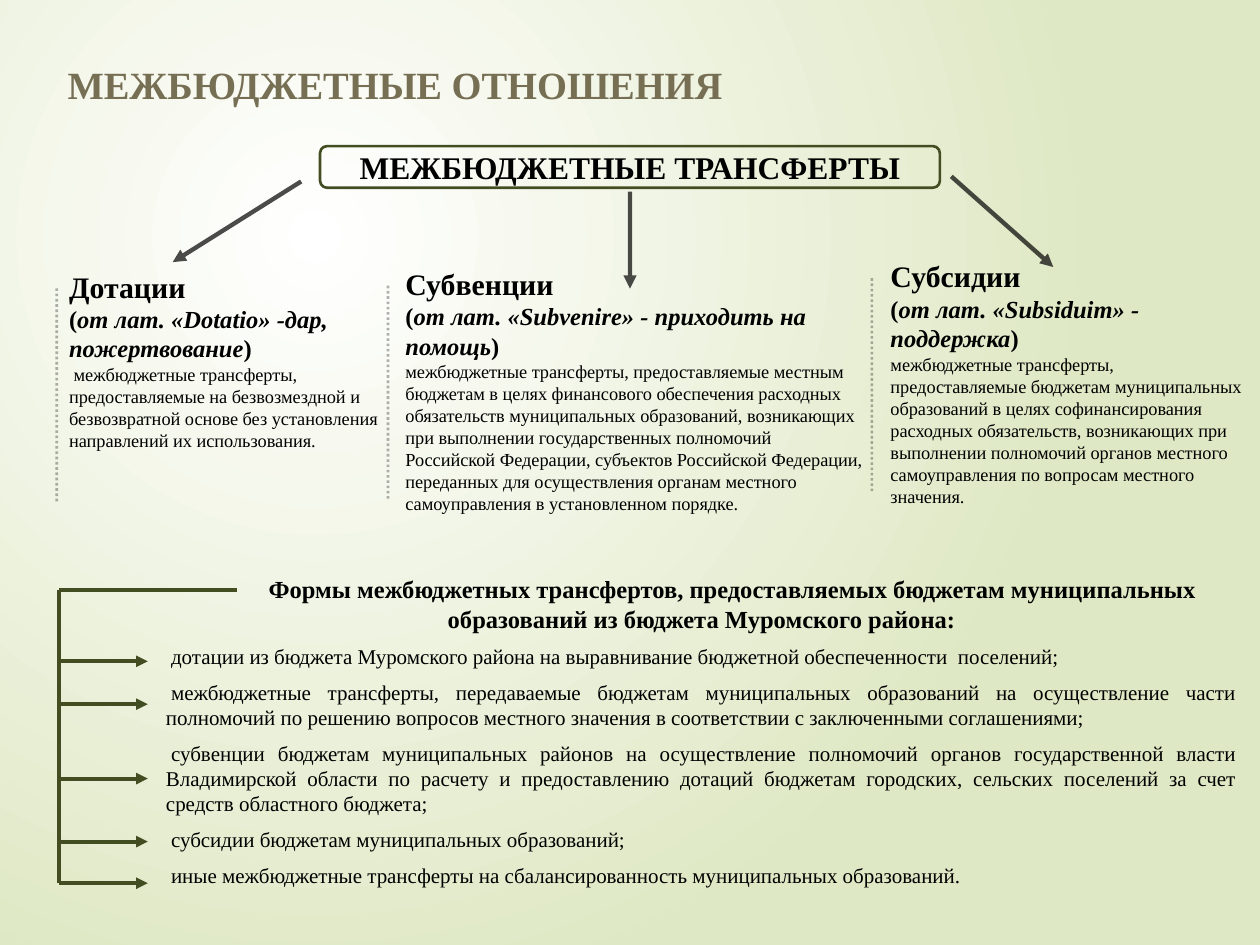
from lxml.etree import SubElement
from pptx import Presentation
from pptx.dml.color import RGBColor
from pptx.enum.dml import MSO_LINE
from pptx.enum.shapes import MSO_CONNECTOR, MSO_SHAPE
from pptx.enum.text import MSO_ANCHOR, MSO_AUTO_SIZE, PP_ALIGN
from pptx.oxml.ns import qn
from pptx.util import Pt

FONT = "Times New Roman"
COLORS = {
    "glow": "FFFFFF",
    "field": "DFE8C4",
    "title": "766F54",
    "olive": "424D22",
    "ink": "000000",
}

# Each column: box (left, top, width, height), rule offset, term, origin, meaning, indent
COLUMNS = [
    ((32.4, 149.8, 192.2, 125.3), 0, "Дотации", "от лат. «Dotatio» -дар, пожертвование",
     "межбюджетные трансферты, предоставляемые на безвозмездной и безвозвратной основе "
     "без установления направлений их использования.", 2.6),
    ((224.6, 148.3, 276.5, 151.2), -2.9, "Субвенции", "от лат. «Subvenire» - приходить на помощь",
     "межбюджетные трансферты, предоставляемые местным бюджетам в целях финансового "
     "обеспечения расходных обязательств муниципальных образований, возникающих при "
     "выполнении государственных полномочий Российской Федерации, субъектов Российской "
     "Федерации, переданных для осуществления органам местного самоуправления в "
     "установленном порядке.", 0),
    ((501.8, 144, 216, 163.4), -3.6, "Субсидии", "от лат. «Subsiduim» - поддержка",
     "межбюджетные трансферты, предоставляемые бюджетам муниципальных образований в целях "
     "софинансирования расходных обязательств, возникающих при выполнении полномочий "
     "органов местного самоуправления по вопросам местного значения.", 0),
]
FORMS_HEADING = ("Формы межбюджетных трансфертов, предоставляемых бюджетам муниципальных "
                 "образований из бюджета Муромского района:")
# Each form: arrow height below the top of the bracket, wording
FORMS = [
    (41, "дотации из бюджета Муромского района на выравнивание бюджетной обеспеченности  поселений;"),
    (65.5, "межбюджетные трансферты, передаваемые бюджетам муниципальных образований на "
           "осуществление части полномочий по решению вопросов местного значения в "
           "соответствии с заключенными соглашениями;"),
    (108, "субвенции бюджетам муниципальных районов на осуществление полномочий органов "
          "государственной власти Владимирской области по расчету и предоставлению дотаций "
          "бюджетам городских, сельских поселений за счет средств областного бюджета;"),
    (144, "субсидии бюджетам муниципальных образований;"),
    (167.8, "иные межбюджетные трансферты на сбалансированность муниципальных образований."),
]


def rgb(name):
    return RGBColor.from_string(COLORS[name])


def write(paragraph, text, size, color="ink", bold=False, italic=False,
          align=None, indent=0, before=0):
    """Add one formatted run and set the layout of its paragraph."""
    run = paragraph.add_run()
    run.text = text
    font = run.font
    font.name, font.size, font.bold, font.italic = FONT, Pt(size), bold, italic
    font.color.rgb = rgb(color)
    paragraph.alignment = align
    paragraph.space_before = Pt(before)
    if indent:
        properties = paragraph._p.get_or_add_pPr()
        properties.set("marL", "0")
        properties.set("indent", str(Pt(indent)))


def text_area(slide, box):
    frame = slide.shapes.add_textbox(*map(Pt, box)).text_frame
    frame.word_wrap = True
    return frame


def draw_line(slide, start, end, color, width, alpha=None, dash=None, arrow=False):
    connector = slide.shapes.add_connector(MSO_CONNECTOR.STRAIGHT, *map(Pt, (*start, *end)))
    line = connector.line
    line.color.rgb = rgb(color)
    line.width = Pt(width)
    if dash:
        line.dash_style = dash
    outline = line._get_or_add_ln()
    if alpha:
        tint = outline.find(".//" + qn("a:srgbClr"))
        SubElement(tint, qn("a:alpha"), val=str(alpha * 1000))
    if arrow:
        SubElement(outline, qn("a:tailEnd"), type="triangle")
    SubElement(connector._element.spPr, qn("a:effectLst"))


def paint_background(slide):
    fill = slide.background.fill
    fill.gradient()
    for stop, color in zip(fill.gradient_stops, ("glow", "field")):
        stop.color.rgb = rgb(color)
    gradient = slide._element.find(".//" + qn("a:gradFill"))
    gradient.remove(gradient.find(qn("a:lin")))
    circle = SubElement(gradient, qn("a:path"), path="circle")
    SubElement(circle, qn("a:fillToRect"), l="50000", t="50000", r="100000", b="100000")


def place_title(slide, box):
    title = slide.shapes.title
    title.left, title.top, title.width, title.height = map(Pt, box)
    frame = title.text_frame
    frame.auto_size = MSO_AUTO_SIZE.NONE
    frame.vertical_anchor = MSO_ANCHOR.MIDDLE
    write(frame.paragraphs[0], "МЕЖБЮДЖЕТНЫЕ ОТНОШЕНИЯ", 22, "title", bold=True,
          align=PP_ALIGN.CENTER)


def place_transfers(slide, box):
    """Framed heading with three arrows to the columns."""
    left, top, width, height = box
    heading = slide.shapes.add_shape(MSO_SHAPE.ROUNDED_RECTANGLE, *map(Pt, box))
    heading.shadow.inherit = False
    heading.fill.background()
    heading.line.color.rgb = rgb("olive")
    heading.line.width = Pt(1.5)
    frame = heading.text_frame
    frame.word_wrap = False
    frame.vertical_anchor = MSO_ANCHOR.MIDDLE
    write(frame.paragraphs[0], "МЕЖБЮДЖЕТНЫЕ ТРАНСФЕРТЫ", 18, bold=True, align=PP_ALIGN.CENTER)

    right, middle = left + width, left + width / 2
    for start, end in [
        ((left - 10.8, top + 20.2), (left - 84.2, top + 66.3)),
        ((middle, top + 26), (middle, top + 81.4)),
        ((right + 6.5, top + 17.3), (right + 64.8, top + 69.1)),
    ]:
        draw_line(slide, start, end, "ink", 2.5, alpha=70, arrow=True)


def place_column(slide, box, rule_offset, term, origin, meaning, indent):
    """Definition of one kind of transfer with a dotted rule on its left."""
    frame = text_area(slide, box)
    write(frame.paragraphs[0], term, 17, bold=True)
    source = frame.add_paragraph()
    for part, italic in (("(", False), (origin, True), (")", False)):
        write(source, part, 14, bold=True, italic=italic)
    write(frame.add_paragraph(), meaning, 10.5, indent=indent)

    rule_x, rule_top = box[0] + rule_offset, box[1] + 15
    draw_line(slide, (rule_x, rule_top), (rule_x, rule_top + 123), "ink", 1.5,
              alpha=30, dash=MSO_LINE.ROUND_DOT)


def place_forms(slide, box):
    """List of transfer forms with a bracket and an arrow for each form."""
    left, top, width, height = box
    text_left = left + 54.3
    frame = text_area(slide, (text_left, top, width - 54.3, height))
    write(frame.paragraphs[0], FORMS_HEADING, 14, bold=True,
          align=PP_ALIGN.CENTER, indent=35.3)

    bracket_top = top + 12.2
    draw_line(slide, (left + 101.8, bracket_top), (left, bracket_top), "olive", 2.25)
    draw_line(slide, (left, bracket_top), (left, bracket_top + FORMS[-1][0]), "olive", 2.25)
    for drop, wording in FORMS:
        write(frame.add_paragraph(), wording, 12, align=PP_ALIGN.JUSTIFY, indent=2.9, before=6)
        arrow_y = bracket_top + drop
        draw_line(slide, (left, arrow_y), (left + 51, arrow_y), "olive", 2.25, arrow=True)


def main():
    deck = Presentation()
    deck.slide_width, deck.slide_height = Pt(720), Pt(540)
    slide = deck.slides.add_slide(deck.slide_layouts[5])
    paint_background(slide)
    place_title(slide, (18.7, 31, 414, 33.8))
    place_transfers(slide, (182.9, 83.5, 354.2, 23.8))
    for column in COLUMNS:
        place_column(slide, *column)
    place_forms(slide, (33.5, 324.7, 680.7, 188))
    deck.save("out.pptx")


if __name__ == "__main__":
    main()
